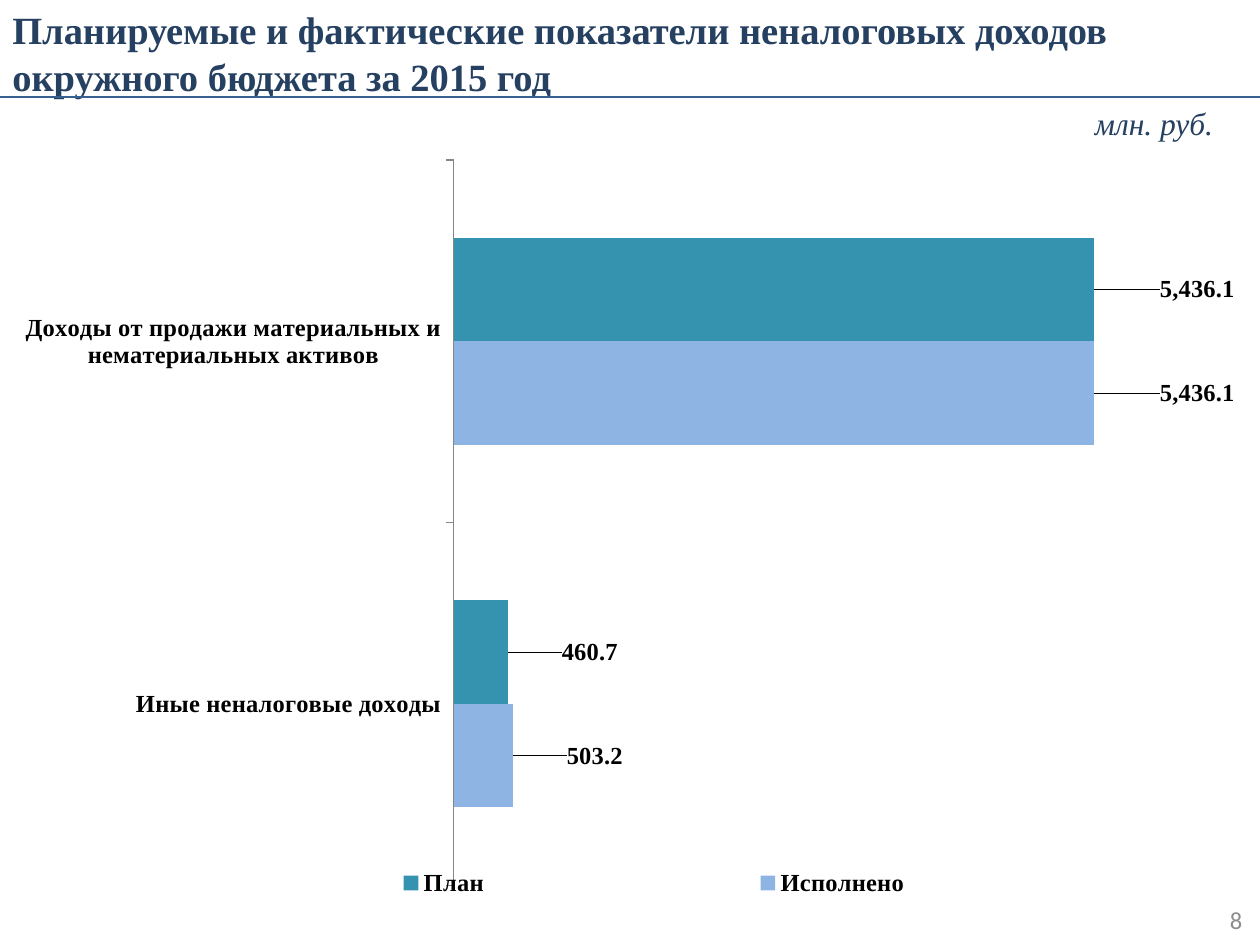
from lxml import etree
from pptx import Presentation
from pptx.chart.data import CategoryChartData
from pptx.dml.color import RGBColor
from pptx.enum.chart import XL_CHART_TYPE, XL_LABEL_POSITION, XL_LEGEND_POSITION, XL_TICK_MARK
from pptx.enum.shapes import MSO_CONNECTOR
from pptx.enum.text import MSO_ANCHOR, PP_ALIGN
from pptx.oxml import parse_xml
from pptx.oxml.ns import nsdecls, qn
from pptx.util import Pt

BAR_CLUSTERED = XL_CHART_TYPE.BAR_CLUSTERED
OUTSIDE_END = XL_LABEL_POSITION.OUTSIDE_END
LEGEND_RIGHT = XL_LEGEND_POSITION.RIGHT
TICK_OUTSIDE = XL_TICK_MARK.OUTSIDE
STRAIGHT = MSO_CONNECTOR.STRAIGHT
MIDDLE = MSO_ANCHOR.MIDDLE
LEFT, CENTER, RIGHT = PP_ALIGN.LEFT, PP_ALIGN.CENTER, PP_ALIGN.RIGHT

COLORS = {
    "heading": "254061",
    "rule": "376092",
    "page": "8C8C8C",
    "text": "000000",
    "axis": "868686",
    "plan": "3693B0",
    "actual": "8EB4E3",
}
SERIF, SANS = "Times New Roman", "Calibri"
NUMBER_FORMAT = "#,##0.0"

CATEGORIES = [
    "Иные неналоговые доходы",
    "Доходы от продажи материальных и нематериальных активов",
]
# Name, values, colour, horizontal label shifts as shares of the chart width
SERIES = [
    ("Исполнено", (503.2, 5436.1), "actual", (0.04, 0.05)),
    ("План", (460.7, 5436.1), "plan", (0.04, 0.05)),
]


def rgb(name):
    return RGBColor.from_string(COLORS[name])


def add_text(slide, box, text, size, color, font=SERIF, align=LEFT, bold=False, italic=False):
    frame = slide.shapes.add_textbox(*map(Pt, box)).text_frame
    frame.word_wrap = True
    frame.vertical_anchor = MIDDLE
    frame.text = text
    paragraph = frame.paragraphs[0]
    paragraph.alignment = align
    style = paragraph.runs[0].font
    style.name, style.size, style.bold, style.italic = font, Pt(size), bold, italic
    style.color.rgb = rgb(color)


def manual_layout(inner=False, **shares):
    """Chart layout element; x, y, w and h are shares of the chart area."""
    target = '<c:layoutTarget val="inner"/>' if inner else ""
    modes = '<c:xMode val="edge"/><c:yMode val="edge"/>' if "w" in shares else ""
    parts = "".join(f'<c:{key} val="{share}"/>' for key, share in shares.items())
    return parse_xml(f'<c:layout {nsdecls("c")}><c:manualLayout>{target}{modes}{parts}'
                     '</c:manualLayout></c:layout>')


def add_header(slide, box):
    left, top, width, height = box
    add_text(slide, (left, top + 13, width, 34),
             "Планируемые и фактические показатели неналоговых доходов окружного бюджета за 2015 год",
             22, "heading", bold=True)

    # Rule under the title
    rule_y = Pt(top + 55.5)
    rule = slide.shapes.add_connector(STRAIGHT, Pt(left), rule_y, Pt(left + width), rule_y)
    rule.line.color.rgb = rgb("rule")
    rule.line.width = Pt(1.5)
    etree.SubElement(rule.element.spPr, qn("a:effectLst"))

    # Unit of measure
    add_text(slide, (left + width - 105, top + height - 17, 89, 17),
             "млн. руб.", 18, "heading", align=CENTER, italic=True)


def format_series(series, color, label_shifts):
    series.format.fill.solid()
    series.format.fill.fore_color.rgb = rgb(color)
    series.invert_if_negative = False
    labels = series.data_labels
    labels.show_value = True
    labels.number_format = NUMBER_FORMAT
    labels.number_format_is_linked = False
    labels.position = OUTSIDE_END

    for index, shift in enumerate(label_shifts):
        series.points[index].data_label.position = OUTSIDE_END
    for label, shift in zip(labels._element.findall(qn("c:dLbl")), label_shifts):
        number_format = parse_xml(f'<c:numFmt {nsdecls("c")} formatCode="{NUMBER_FORMAT}" '
                                  'sourceLinked="0"/>')
        label.insert(1, manual_layout(x=shift, y=0))
        label.insert(2, number_format)


def add_revenue_chart(slide, box):
    chart_data = CategoryChartData(number_format=NUMBER_FORMAT)
    chart_data.categories = CATEGORIES
    for name, values, _, _ in SERIES:
        chart_data.add_series(name, values)
    chart = slide.shapes.add_chart(BAR_CLUSTERED, *map(Pt, box), chart_data).chart
    chart.has_title = False
    chart.font.name, chart.font.size, chart.font.bold = SERIF, Pt(14), True
    chart.font.color.rgb = rgb("text")

    # Axes
    category_axis, value_axis = chart.category_axis, chart.value_axis
    category_axis.major_tick_mark = TICK_OUTSIDE
    category_axis.format.line.color.rgb = rgb("axis")
    value_axis.visible = False
    value_axis.has_major_gridlines = False
    value_axis.minimum_scale, value_axis.maximum_scale = 0, 6000

    # Bars and their labels
    plot = chart.plots[0]
    plot.gap_width, plot.overlap = 150, 0
    plot.vary_by_categories = False
    for series, (_, _, color, shifts) in zip(plot.series, SERIES):
        format_series(series, color, shifts)

    # Legend
    chart.has_legend = True
    chart.legend.position = LEGEND_RIGHT
    chart.legend.include_in_layout = True

    # Plot and legend placement
    plot_area = chart._chartSpace.chart.plotArea
    for old_layout in plot_area.findall(qn("c:layout")):
        plot_area.remove(old_layout)
    plot_area.insert(0, manual_layout(inner=True, x=0.351, y=0.026, w=0.579, h=0.942))
    legend = chart.legend._element
    for old_layout in legend.findall(qn("c:layout")):
        legend.remove(old_layout)
    legend.find(qn("c:legendPos")).addnext(manual_layout(x=0.09, y=0.94, w=0.85, h=0.05))


def add_page_number(slide, box):
    add_text(slide, box, "8", 14, "page", font=SANS, align=RIGHT)


def main():
    presentation = Presentation()
    presentation.slide_width, presentation.slide_height = Pt(720), Pt(540)
    slide = presentation.slides.add_slide(presentation.slide_layouts[6])
    add_header(slide, (0, 0, 720, 78.5))
    add_revenue_chart(slide, (14.5, 80, 697.5, 440))
    add_page_number(slide, (665, 511, 52, 29))
    presentation.save("out.pptx")


if __name__ == "__main__":
    main()
